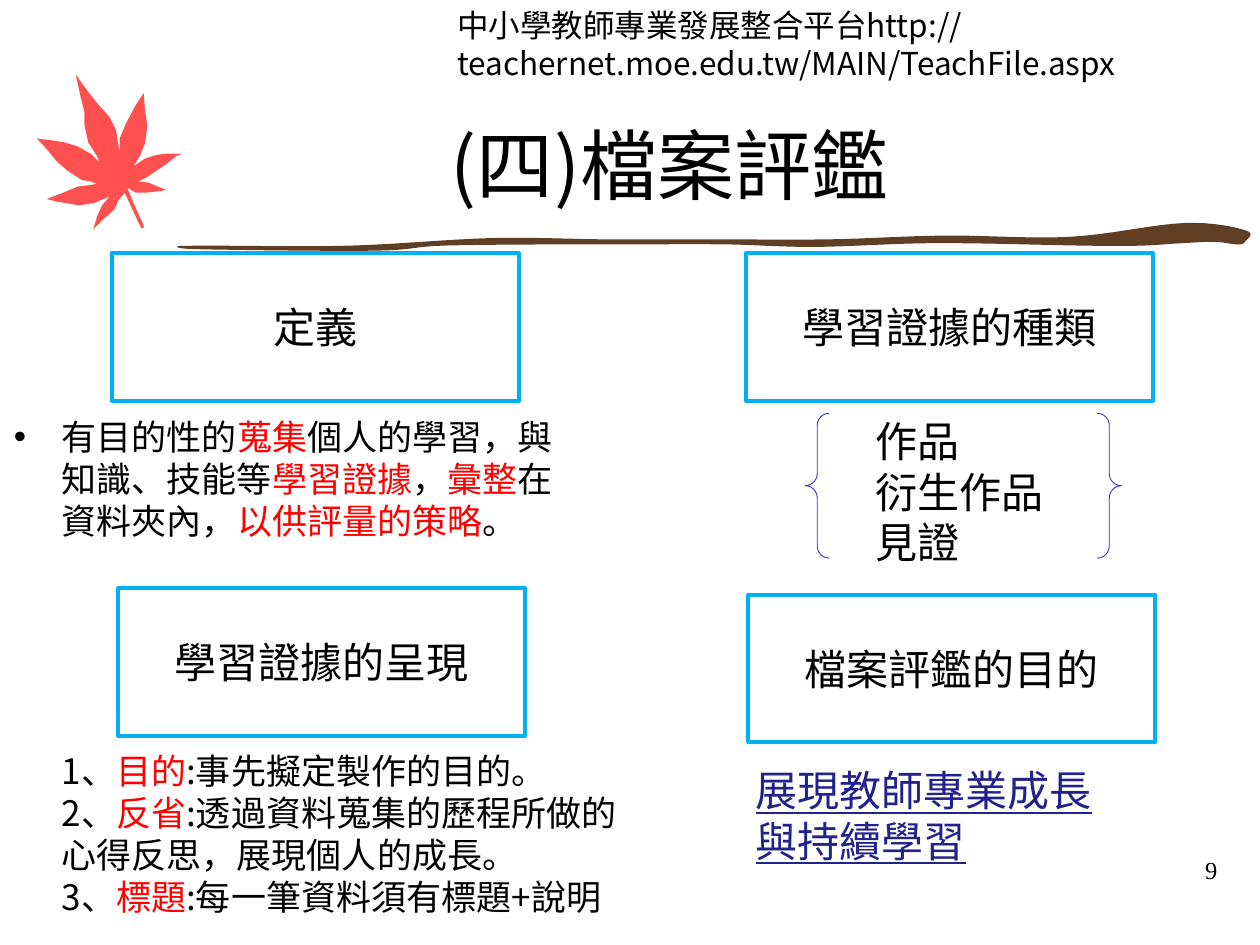
from lxml import etree
from pptx import Presentation
from pptx.dml.color import RGBColor
from pptx.enum.shapes import MSO_SHAPE as Preset
from pptx.enum.text import MSO_ANCHOR as Anchor, MSO_AUTO_SIZE as AutoSize, PP_ALIGN as Align
from pptx.oxml.ns import qn
from pptx.util import Inches, Pt

BLACK = RGBColor(0x00, 0x00, 0x00)
RED = RGBColor(0xFF, 0x00, 0x00)
NAVY = RGBColor(0x22, 0x22, 0x8B)
SKY = RGBColor(0x00, 0xB0, 0xF0)
BLUE = RGBColor(0x33, 0x33, 0xCC)
LEAF = RGBColor(0xFF, 0x50, 0x50)
BRANCH = RGBColor(0x60, 0x3E, 0x24)

CELL = Inches(0.1)  # the slide is a grid of 100 columns by 75 rows
STEPS = 8  # line pieces per curve of a smooth outline

# Outlines, in hundredths of an inch
LEAF_POINTS = [
    (114, 181), (112, 181), (104, 164), (99, 153), (94, 159), (91, 166), (81, 175),
    (74, 182), (77, 172), (81, 163), (87, 156), (75, 161), (63, 163), (45, 160),
    (37, 158), (50, 153), (62, 148), (71, 147), (77, 146), (72, 144), (65, 143),
    (53, 135), (45, 128), (35, 116), (29, 110), (38, 111), (51, 113), (61, 116),
    (72, 122), (79, 129), (77, 124), (70, 113), (67, 99), (67, 89), (64, 77),
    (60, 59), (70, 73), (78, 83), (87, 93), (92, 103), (95, 122), (95, 110),
    (100, 98), (108, 83), (114, 74), (115, 87), (117, 100), (115, 114), (111, 124),
    (106, 132), (115, 126), (124, 123), (132, 122), (144, 122), (140, 124),
    (131, 131), (116, 141), (110, 144), (118, 145), (132, 151), (116, 153),
    (108, 153), (101, 149), (105, 159), (114, 179),
]
BRANCH_POINTS = [
    (989, 183), (940, 177), (849, 188), (750, 187), (658, 190), (567, 190),
    (481, 190), (390, 189), (277, 195), (160, 195), (141, 196), (165, 198),
    (298, 199), (351, 195), (444, 194), (502, 194), (576, 194), (647, 196),
    (743, 193), (861, 195), (905, 195), (939, 193), (964, 192), (982, 194),
    (988, 192),
]


def smooth(points):
    """Closed Catmull-Rom curve through the points."""
    count = len(points)
    curve = []
    for index in range(count):
        corners = [points[(index + shift) % count] for shift in (-1, 0, 1, 2)]
        for step in range(STEPS):
            t = step / STEPS
            curve.append(tuple(
                (2 * b + (c - a) * t + (2 * a - 5 * b + 4 * c - d) * t ** 2
                 + (3 * b - a - 3 * c + d) * t ** 3) / 2
                for a, b, c, d in zip(*corners)))
    return curve


class SlideBuilder:
    font = "Noto Sans CJK SC"
    leading = 1.2

    def __init__(self, presentation):
        layout = presentation.slide_layouts.get_by_name("Title and Content")
        self.slide = presentation.slides.add_slide(layout)
        self.shapes = self.slide.shapes

    def area(self, column, row, columns, rows):
        return [round(value * CELL) for value in (column, row, columns, rows)]

    def fill_text(self, shape, paragraphs, size, color=BLACK, align=Align.LEFT,
                  anchor=Anchor.TOP, font=None, underline=None, bullet=False):
        """Each paragraph is a list of runs: plain text, or (text, colour)."""
        frame = shape.text_frame
        frame.word_wrap = True
        frame.auto_size = AutoSize.NONE
        frame.vertical_anchor = anchor
        for index, runs in enumerate(paragraphs):
            paragraph = frame.add_paragraph() if index else frame.paragraphs[0]
            if bullet:
                self.bullet(paragraph)
            paragraph.alignment = align
            paragraph.space_before = Pt(0)
            paragraph.line_spacing = Pt(size * self.leading)
            for item in runs:
                text, run_color = item if isinstance(item, tuple) else (item, color)
                run = paragraph.add_run()
                run.text = text
                run.font.size = Pt(size)
                run.font.name = font or self.font
                run.font.color.rgb = run_color
                run.font.underline = underline
                east_asian = etree.SubElement(run._r.get_or_add_rPr(), qn("a:ea"))
                east_asian.set("typeface", font or self.font)

    def bullet(self, paragraph):
        properties = paragraph._p.get_or_add_pPr()
        properties.set("marL", str(Inches(0.38)))
        properties.set("indent", str(-Inches(0.38)))
        etree.SubElement(properties, qn("a:buChar")).set("char", "•")

    def placeholder(self, number, area, paragraphs, size, **style):
        shape = self.slide.placeholders[number]
        shape.left, shape.top, shape.width, shape.height = self.area(*area)
        self.fill_text(shape, paragraphs, size, **style)

    def text(self, area, paragraphs, size, **style):
        self.fill_text(self.shapes.add_textbox(*self.area(*area)), paragraphs, size, **style)

    def outlined(self, preset, area, color, width):
        shape = self.shapes.add_shape(preset, *self.area(*area))
        shape.shadow.inherit = False
        shape.fill.background()
        shape.line.color.rgb = color
        shape.line.width = Pt(width)
        return shape

    def heading_box(self, column, row, text):
        shape = self.outlined(Preset.FLOWCHART_PROCESS, (column, row, 32.3, 11.7), SKY, 2.25)
        self.fill_text(shape, [[text]], 24, align=Align.CENTER, anchor=Anchor.MIDDLE)

    def outline(self, points, color):
        fine = [(x * 100, y * 100) for x, y in points]
        builder = self.shapes.build_freeform(*fine[0], scale=Inches(0.01) / 100)
        builder.add_line_segments(fine[1:], close=True)
        shape = builder.convert_to_shape()
        shape.shadow.inherit = False
        shape.fill.solid()
        shape.fill.fore_color.rgb = color
        shape.line.fill.background()


def main():
    presentation = Presentation()
    presentation.slide_width, presentation.slide_height = 100 * CELL, 75 * CELL
    page = SlideBuilder(presentation)

    # Leaf and branch decoration
    page.outline(LEAF_POINTS, LEAF)
    page.outline(smooth(BRANCH_POINTS), BRANCH)

    # Title, source and page number
    page.placeholder(0, (13.8, 6.7, 78.7, 12.5), [["(四)檔案評鑑"]], 44,
                     align=Align.CENTER, anchor=Anchor.MIDDLE)
    page.text((35.3, 0, 64.2, 7.1),
              [["中小學教師專業發展整合平台http://teachernet.moe.edu.tw/MAIN/TeachFile.aspx"]], 18)
    page.text((76.8, 67.4, 20.8, 5), [["9"]], 14, align=Align.RIGHT, font="Times New Roman")

    # Heading boxes
    for column, row, heading in [
        (8.9, 20.1, "定義"), (59.2, 20.1, "學習證據的種類"),
        (9.4, 46.7, "學習證據的呈現"), (59.4, 47.2, "檔案評鑑的目的"),
    ]:
        page.heading_box(column, row, heading)

    # Definition
    page.placeholder(1, (0.1, 32.5, 47.1, 15), [[
        "有目的性的", ("蒐集", RED), "個人的學習，與知識、技能等", ("學習證據", RED), "，",
        ("彙整", RED), "在資料夾內，", ("以供評量的策略", RED), "。",
    ]], 20, bullet=True)

    # Kinds of evidence
    page.outlined(Preset.DOUBLE_BRACE, (63.9, 32.8, 25.1, 11.5), BLUE, 0.5)
    page.text((68.5, 32.5, 16.6, 13.2), [["作品"], ["衍生作品"], ["見證"]], 24)

    # Presentation of evidence
    page.text((3.9, 59, 48.8, 14.5), [
        ["1、", ("目的", RED), ":事先擬定製作的目的。"],
        ["2、", ("反省", RED), ":透過資料蒐集的歷程所做的心得反思，展現個人的成長。"],
        ["3、", ("標題", RED), ":每一筆資料須有標題+說明"],
    ], 20)

    # Purpose
    page.text((59, 60.2, 32.6, 9.1), [["展現教師專業成長"], ["與持續學習"]], 24,
              color=NAVY, underline=True)

    presentation.save("out.pptx")


if __name__ == "__main__":
    main()
